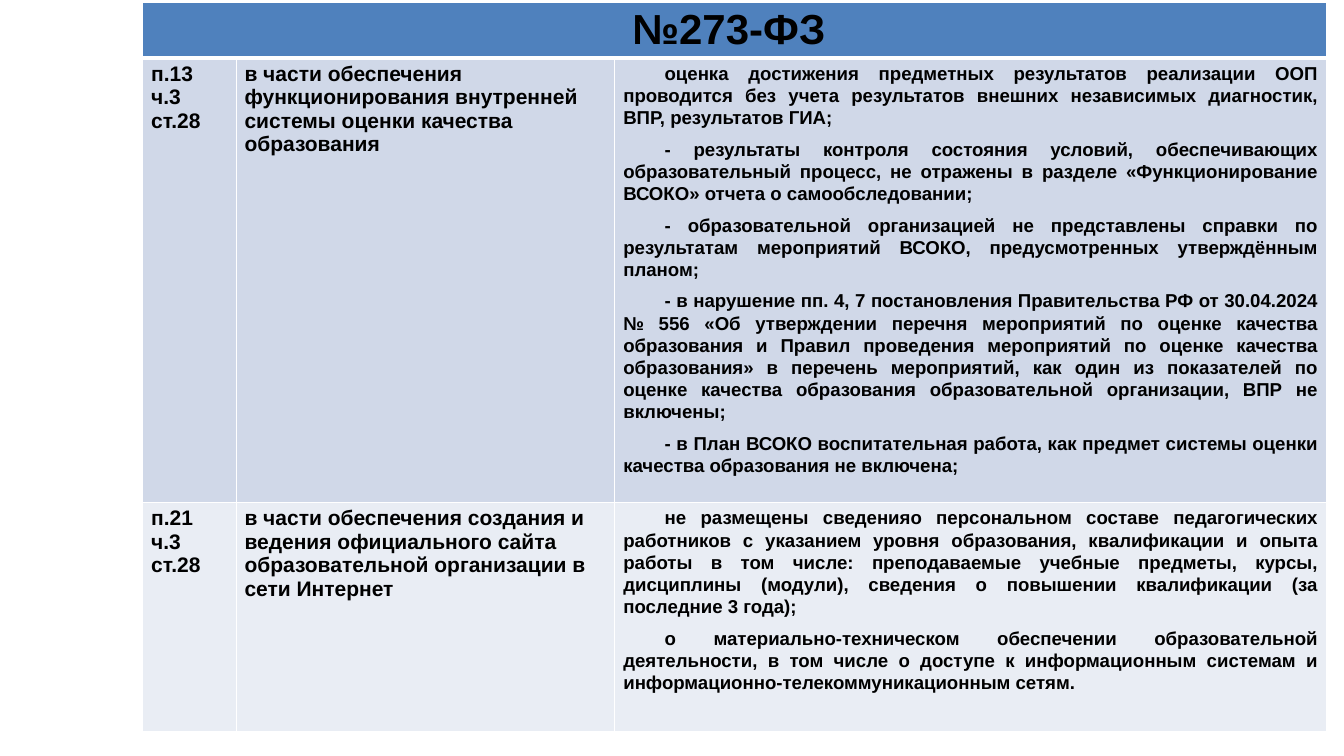
from dataclasses import dataclass

from lxml.etree import SubElement
from pptx import Presentation
from pptx.dml.color import RGBColor
from pptx.enum.text import PP_ALIGN
from pptx.oxml.ns import qn
from pptx.table import Table, _Cell
from pptx.util import Pt

COLORS = {
    "text": "000000",
    "border": "FFFFFF",
    "header": "4F81BD",
    "odd_row": "D0D8E8",
    "even_row": "E9EDF4",
}
COLUMN_WIDTHS = [80, 324.7, 610]
ROW_HEIGHTS = [47.5, 381, 196]
FIRST_LINE_INDENT = 35.4


@dataclass
class Violation:
    clause: str
    subject: str
    findings: list[str]
    fill: str


VIOLATIONS = [
    Violation(
        "п.13 ч.3 ст.28",
        "в части обеспечения функционирования внутренней системы оценки качества образования",
        [
            "оценка достижения предметных результатов реализации ООП проводится без учета "
            "результатов внешних независимых диагностик, ВПР, результатов ГИА;",
            "- результаты контроля состояния условий, обеспечивающих образовательный процесс, "
            "не отражены в разделе «Функционирование ВСОКО» отчета о самообследовании;",
            "- образовательной организацией не представлены справки по результатам мероприятий "
            "ВСОКО, предусмотренных утверждённым планом;",
            "- в нарушение пп. 4, 7 постановления Правительства РФ от 30.04.2024 № 556 "
            "«Об утверждении перечня мероприятий по оценке качества образования и Правил "
            "проведения мероприятий по оценке качества образования» в перечень мероприятий, "
            "как один из показателей по оценке качества образования образовательной "
            "организации, ВПР не включены;",
            "- в План ВСОКО воспитательная работа, как предмет системы оценки качества "
            "образования не включена;",
        ],
        "odd_row",
    ),
    Violation(
        "п.21 ч.3 ст.28",
        "в части обеспечения создания и ведения официального сайта образовательной "
        "организации в сети Интернет",
        [
            "не размещены сведенияо персональном составе педагогических работников с указанием "
            "уровня образования, квалификации и опыта работы в том числе: преподаваемые учебные "
            "предметы, курсы, дисциплины (модули), сведения о повышении квалификации "
            "(за последние 3 года);",
            "о материально-техническом обеспечении образовательной деятельности, в том числе "
            "о доступе к информационным системам и информационно-телекоммуникационным сетям.",
        ],
        "even_row",
    ),
]


def style_cell(cell: _Cell, fill: str, top: float = 1, bottom: float = 1) -> None:
    properties = cell._tc.get_or_add_tcPr()
    for side, width in (("L", 1), ("R", 1), ("T", top), ("B", bottom)):
        line = SubElement(properties, qn(f"a:ln{side}"), w=str(Pt(width)))
        SubElement(SubElement(line, qn("a:solidFill")), qn("a:srgbClr"), val=COLORS["border"])
    cell.fill.solid()
    cell.fill.fore_color.rgb = RGBColor.from_string(COLORS[fill])


def write_cell(
    cell: _Cell,
    texts: list[str],
    size: float,
    alignment: PP_ALIGN = PP_ALIGN.LEFT,
    indented: bool = False,
) -> None:
    cell.text = "\n".join(texts)
    for paragraph in cell.text_frame.paragraphs:
        paragraph.alignment = alignment
        if indented:
            properties = paragraph._p.get_or_add_pPr()
            properties.set("marL", "0")
            properties.set("indent", str(Pt(FIRST_LINE_INDENT)))
            paragraph.line_spacing = 1.07
            paragraph.space_after = Pt(8)
        paragraph.font.name = "Arial"
        paragraph.font.size = Pt(size)
        paragraph.font.bold = True
        paragraph.font.color.rgb = RGBColor.from_string(COLORS["text"])


def fill_header(table: Table) -> None:
    for cell in table.rows[0].cells:
        style_cell(cell, "header", bottom=3)
    table.cell(0, 0).merge(table.cell(0, 2))
    write_cell(table.cell(0, 0), ["№273-ФЗ "], 36, PP_ALIGN.CENTER)


def fill_violation(table: Table, row: int, violation: Violation) -> None:
    for cell in table.rows[row].cells:
        style_cell(cell, violation.fill, top=3 if row == 1 else 1)
    write_cell(table.cell(row, 0), [violation.clause], 18)
    write_cell(table.cell(row, 1), [violation.subject], 18)
    write_cell(table.cell(row, 2), violation.findings, 16, PP_ALIGN.JUSTIFY, indented=True)


def main() -> None:
    presentation = Presentation()
    presentation.slide_width = Pt(1152)
    presentation.slide_height = Pt(648)
    slide = presentation.slides.add_slide(presentation.slide_layouts[6])
    table = slide.shapes.add_table(
        len(ROW_HEIGHTS), len(COLUMN_WIDTHS),
        Pt(122.4), Pt(2.2), Pt(sum(COLUMN_WIDTHS)), Pt(sum(ROW_HEIGHTS)),
    ).table
    for column, width in zip(table.columns, COLUMN_WIDTHS):
        column.width = Pt(width)
    for row, height in zip(table.rows, ROW_HEIGHTS):
        row.height = Pt(height)
    fill_header(table)
    for row_number, violation in enumerate(VIOLATIONS, start=1):
        fill_violation(table, row_number, violation)
    presentation.save("out.pptx")


if __name__ == "__main__":
    main()
